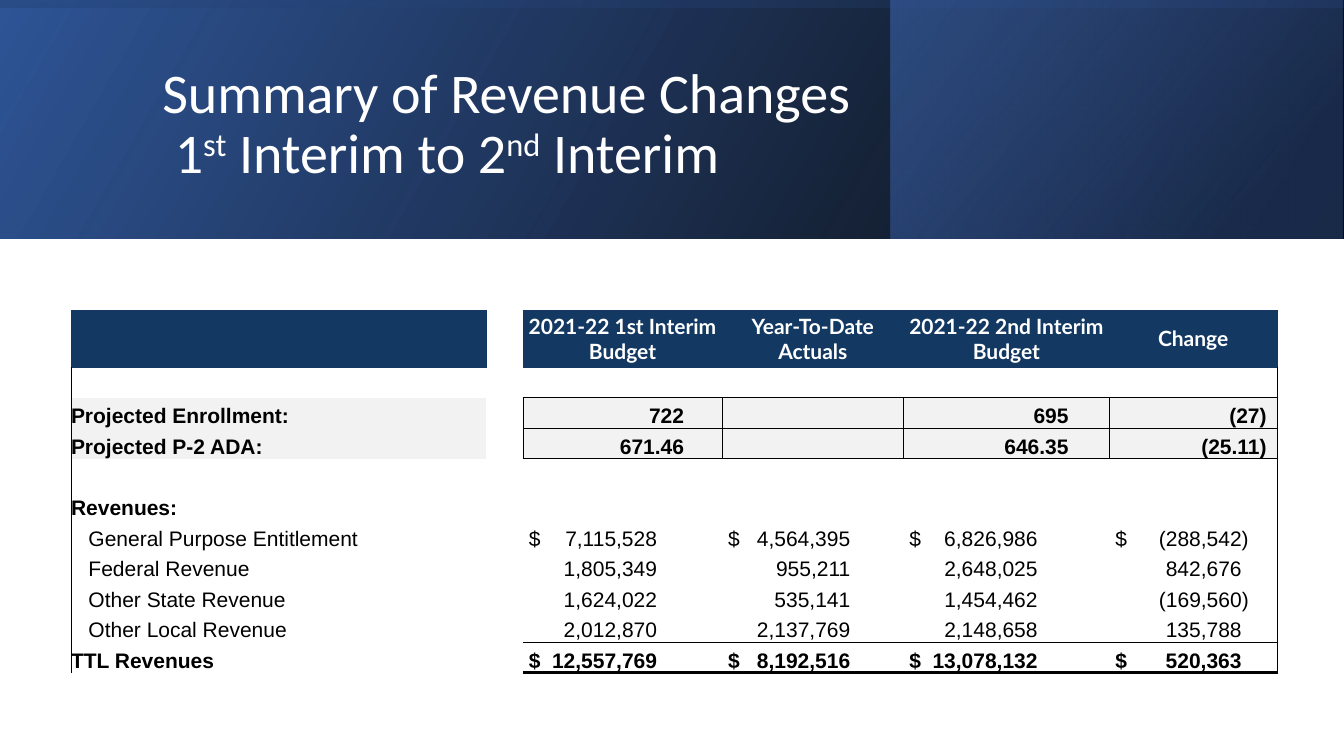
"""Build the slide that sums up revenue changes between the two interim budgets."""
from dataclasses import dataclass

from lxml.etree import SubElement
from pptx import Presentation
from pptx.dml.color import RGBColor as RGB
from pptx.enum.shapes import MSO_SHAPE as SHAPE
from pptx.enum.text import MSO_ANCHOR as ANCHOR, PP_ALIGN as ALIGN
from pptx.oxml import parse_xml
from pptx.oxml.ns import nsdecls, qn
from pptx.util import Cm, Pt

COLORS = {"navy": "133963", "grey": "F2F2F2", "white": "FFFFFF", "black": "000000",
          "blue": "2F5597", "deep": "203864", "bright": "4472C4"}
PLAIN_STYLE = "{2D5ABB26-0587-4C30-8999-92F81FD0307C}"
COL_WIDTHS = (10.47, 0.92, 5.02, 4.57, 5.19, 4.22)
HEADER_HEIGHT, ROW_HEIGHT = 1.43, 0.77
FIGURE_ENDS = {2: 3.38, 3: 3.23, 4: 3.38, 5: 3.33}
COUNT_ENDS = {2: 4.06, 3: 4.0, 4: 4.16, 5: 3.78}
DOLLAR_INSET, LABEL_INDENT, PAREN_HANG = 0.15, 0.44, 0.18


@dataclass
class Stop:
    pos: int
    color: str
    alpha: int = 100


@dataclass
class Panel:
    box: tuple[float, float, float, float]
    stops: tuple[Stop, Stop]
    angle: int
    rotation: int = 0


@dataclass
class Row:
    label: str = ""
    values: tuple[str, ...] = ()
    kind: str = "item"
    dollar: bool = False

    @property
    def bold(self) -> bool:
        return self.kind != "item"


PANELS = (
    Panel((0, 0, 33.87, 6.02), (Stop(0, "black", 96), Stop(100, "blue")), 330),
    Panel((22.45, 0, 11.38, 6.02), (Stop(19, "deep", 68), Stop(100, "bright", 48)), 320),
    Panel((13.92, -13.92, 6.02, 33.87), (Stop(23, "blue", 16), Stop(99, "black", 45)), 350, 270),
)
TITLE = (("Summary of Revenue Changes \v 1", 0), ("st", 30), (" Interim to 2", 0),
         ("nd", 30), (" Interim", 0))
ROWS = (
    Row("", ("2021-22 1st Interim Budget", "Year-To-Date Actuals",
             "2021-22 2nd Interim Budget", "Change"), "header"),
    Row(),
    Row("Projected Enrollment:", ("722", "", "695", "(27)"), "count"),
    Row("Projected P-2 ADA:", ("671.46", "", "646.35", "(25.11)"), "count"),
    Row(),
    Row("Revenues:", kind="section"),
    Row("General Purpose Entitlement",
        ("7,115,528", "4,564,395", "6,826,986", "(288,542)"), dollar=True),
    Row("Federal Revenue", ("1,805,349", "955,211", "2,648,025", "842,676")),
    Row("Other State Revenue", ("1,624,022", "535,141", "1,454,462", "(169,560)")),
    Row("Other Local Revenue", ("2,012,870", "2,137,769", "2,148,658", "135,788")),
    Row("TTL Revenues", ("12,557,769", "8,192,516", "13,078,132", "520,363"), "total", True),
)


def set_all(target, values: dict) -> None:
    for name, value in values.items():
        setattr(target, name, value)


def add_run(p, text: str, font: str, size: float, color: str, bold: bool = False):
    r = p.add_run()
    r.text = text
    set_all(r.font, {"name": font, "size": Pt(size), "bold": bold})
    r.font.color.rgb = RGB.from_string(COLORS[color])
    return r


def draw_panel(slide, panel: Panel) -> None:
    sp = slide.shapes.add_shape(SHAPE.RECTANGLE, *map(Cm, panel.box))
    sp.rotation = panel.rotation
    sp.shadow.inherit = False
    sp.line.fill.background()
    props = sp._element.spPr
    props.find(qn("a:xfrm")).set("flipH", "1")
    stops = "".join(
        f'<a:gs pos="{s.pos * 1000}"><a:srgbClr val="{COLORS[s.color]}">'
        f'<a:alpha val="{s.alpha * 1000}"/></a:srgbClr></a:gs>' for s in panel.stops)
    props.insert(2, parse_xml(
        f'<a:gradFill {nsdecls("a")} rotWithShape="1"><a:gsLst>{stops}</a:gsLst>'
        f'<a:lin ang="{panel.angle * 60000}" scaled="0"/></a:gradFill>'))


def draw_title(slide) -> None:
    tf = slide.shapes.add_textbox(Cm(3.84), Cm(0.97), Cm(27), Cm(4.37)).text_frame
    set_all(tf, {"word_wrap": True, "vertical_anchor": ANCHOR.MIDDLE})
    p = tf.paragraphs[0]
    p.line_spacing = 0.9
    first, *rest = TITLE
    lines = first[0].split("\v")
    add_run(p, lines[0], "Calibri", 40, "white")
    p.add_line_break()
    for text, raised in ((lines[1], 0), *rest):
        r = add_run(p, text, "Calibri", 40, "white")
        if raised:
            r.font._element.set("baseline", str(raised * 1000))


def cell_borders(index: int, col: int) -> dict[str, tuple[str, float]]:
    kind = ROWS[index].kind
    thin = ("black", 0.5)
    if kind == "header":
        return dict.fromkeys("LR" if col == 1 else "LRTB", ("navy", 0.5))
    if kind == "count" and col > 1:
        return dict.fromkeys("LRTB", thin)
    edges = {}
    if col == 0:
        edges["L"] = thin
    if col == len(COL_WIDTHS) - 1:
        edges["R"] = thin
    if kind == "total" and col > 1:
        edges |= {"T": thin, "B": ("black", 2)}
    elif col > 1 and index + 1 < len(ROWS) and ROWS[index + 1].kind == "total":
        edges["B"] = thin
    return edges


def style_cell(cell, index: int, col: int) -> None:
    set_all(cell, dict.fromkeys(
        ("margin_left", "margin_right", "margin_top", "margin_bottom"), 0))
    props = cell._tc.get_or_add_tcPr()
    for side, (color, width) in cell_borders(index, col).items():
        props.append(parse_xml(
            f'<a:ln{side} {nsdecls("a")} w="{Pt(width)}"><a:solidFill>'
            f'<a:srgbClr val="{COLORS[color]}"/></a:solidFill></a:ln{side}>'))
    fill = {"header": "navy", "count": "grey"}.get(ROWS[index].kind)
    if fill and col != 1:
        cell.fill.solid()
        cell.fill.fore_color.rgb = RGB.from_string(COLORS[fill])
    else:
        cell.fill.background()


def fill_cell(cell, row: Row, col: int) -> None:
    p = cell.text_frame.paragraphs[0]
    text = (row.label, "", *row.values, *[""] * 4)[col]
    cell.vertical_anchor = ANCHOR.BOTTOM
    if not text:
        SubElement(p._p, qn("a:endParaRPr"), sz="1500")
        return
    if row.kind == "header":
        cell.vertical_anchor = ANCHOR.MIDDLE
        p.alignment = ALIGN.CENTER
        add_run(p, text, "Lato", 15, "white", True)
        return
    if col == 0:
        cell.margin_left = 0 if row.bold else Cm(LABEL_INDENT)
    else:
        ends = COUNT_ENDS if row.kind == "count" else FIGURE_ENDS
        end = ends[col] + (PAREN_HANG if text.endswith(")") else 0)
        if row.dollar:
            cell.margin_left = Cm(DOLLAR_INSET)
            tabs = SubElement(p._p.get_or_add_pPr(), qn("a:tabLst"))
            SubElement(tabs, qn("a:tab"), pos=str(Cm(end - DOLLAR_INSET)), algn="r")
            text = f"$\t{text}"
        else:
            p.alignment = ALIGN.RIGHT
            cell.margin_right = Cm(COL_WIDTHS[col] - end)
    add_run(p, text, "Arial", 15, "black", row.bold)


def draw_table(slide) -> None:
    heights = (HEADER_HEIGHT, *[ROW_HEIGHT] * (len(ROWS) - 1))
    table = slide.shapes.add_table(len(ROWS), len(COL_WIDTHS), Cm(1.79), Cm(7.82),
                                   Cm(sum(COL_WIDTHS)), Cm(sum(heights))).table
    set_all(table, {"first_row": False, "horz_banding": False})
    table._tbl.tblPr.find(qn("a:tableStyleId")).text = PLAIN_STYLE
    for column, width in zip(table.columns, COL_WIDTHS):
        column.width = Cm(width)
    for index, (row, height) in enumerate(zip(ROWS, heights)):
        table.rows[index].height = Cm(height)
        for col in range(len(COL_WIDTHS)):
            style_cell(table.cell(index, col), index, col)
            fill_cell(table.cell(index, col), row, col)


def main() -> None:
    prs = Presentation()
    set_all(prs, {"slide_width": Cm(33.87), "slide_height": Cm(19.05)})
    slide = prs.slides.add_slide(prs.slide_layouts[6])
    for panel in PANELS:
        draw_panel(slide, panel)
    draw_title(slide)
    draw_table(slide)
    prs.save("out.pptx")


if __name__ == "__main__":
    main()
